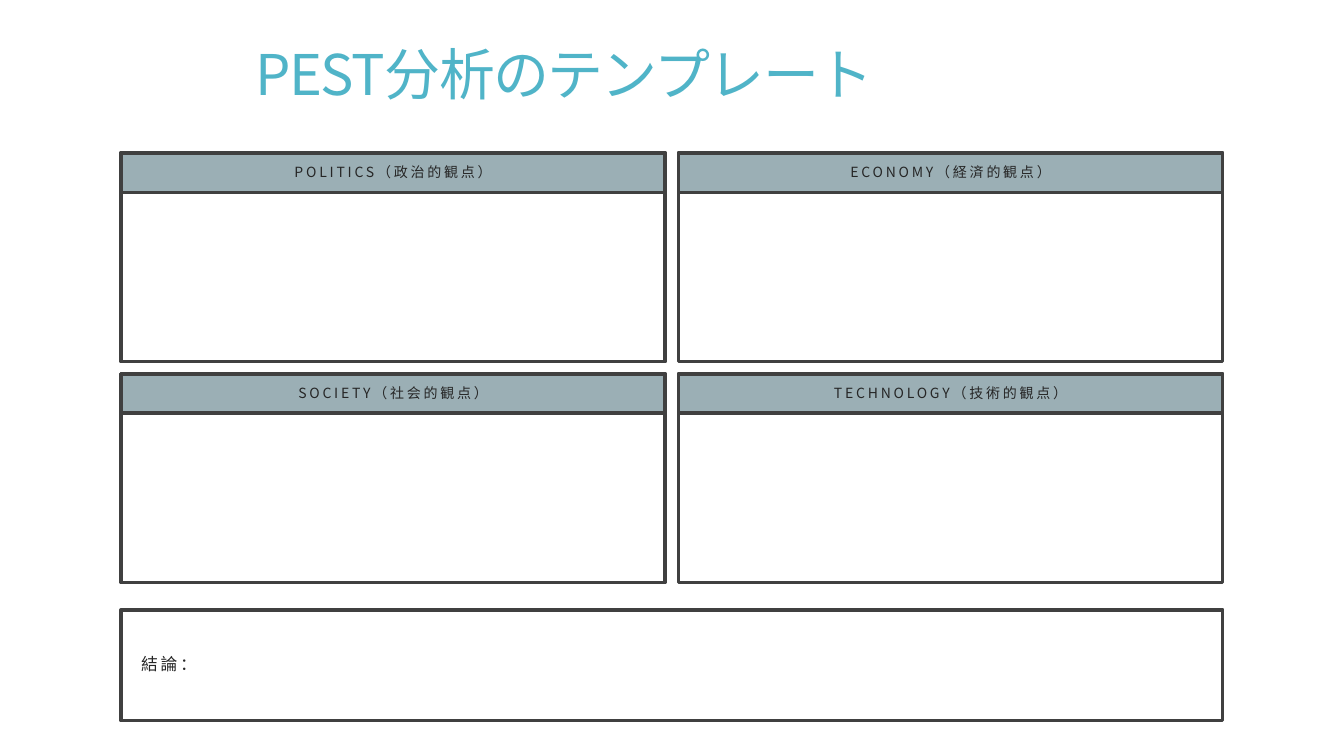
from dataclasses import dataclass

from lxml import etree
from pptx import Presentation
from pptx.dml.color import RGBColor
from pptx.enum.shapes import MSO_SHAPE
from pptx.enum.text import MSO_ANCHOR, PP_ALIGN
from pptx.oxml.ns import qn
from pptx.shapes.autoshape import Shape
from pptx.slide import Slide
from pptx.util import Pt

RECTANGLE = MSO_SHAPE.RECTANGLE
MIDDLE = MSO_ANCHOR.MIDDLE
LEFT, CENTER = PP_ALIGN.LEFT, PP_ALIGN.CENTER

FONT = "Noto Sans CJK JP"
COLORS = {
    "title": "50B4C8",
    "text": "262626",
    "border": "404040",
    "header": "9BAFB5",
    "panel": "FFFFFF",
}

GRID_LEFT, GRID_TOP = 86.4, 109.4
PANEL_WIDTH, PANEL_HEIGHT = 388.8, 149
COLUMN_STEP, ROW_STEP = 398.2, 157.7
HEADER_HEIGHT = 28.1
TEXT_INSET = 14.4


@dataclass(frozen=True)
class Box:
    left: float
    top: float
    width: float
    height: float


@dataclass(frozen=True)
class Perspective:
    heading: str
    column: int
    row: int

    def box(self, height: float) -> Box:
        return Box(
            GRID_LEFT + self.column * COLUMN_STEP,
            GRID_TOP + self.row * ROW_STEP,
            PANEL_WIDTH,
            height,
        )


@dataclass(frozen=True)
class TextStyle:
    size: float
    color: str
    tracking: float
    line_spacing: float
    align: PP_ALIGN = LEFT


TITLE_STYLE = TextStyle(40, "title", -1.2, 0.85)
HEADER_STYLE = TextStyle(10, "text", 2, 0.9, CENTER)
CONCLUSION_STYLE = TextStyle(12, "text", 2, 0.9)

PERSPECTIVES = [
    Perspective("POLITICS（政治的観点）", 0, 0),
    Perspective("ECONOMY（経済的観点）", 1, 0),
    Perspective("SOCIETY（社会的観点）", 0, 1),
    Perspective("TECHNOLOGY（技術的観点）", 1, 1),
]
TITLE_BOX = Box(175.7, 33.1, 608.4, 46.1)
CONCLUSION_BOX = Box(GRID_LEFT, 435.6, COLUMN_STEP + PANEL_WIDTH, 79.2)


def rgb(name: str) -> RGBColor:
    return RGBColor.from_string(COLORS[name])


def bounds(box: Box) -> tuple[Pt, Pt, Pt, Pt]:
    return Pt(box.left), Pt(box.top), Pt(box.width), Pt(box.height)


def write(holder: Shape, text: str, style: TextStyle) -> None:
    frame = holder.text_frame
    frame.word_wrap = True
    frame.vertical_anchor = MIDDLE
    paragraph = frame.paragraphs[0]
    paragraph.text = text
    paragraph.alignment = style.align
    paragraph.line_spacing = style.line_spacing
    font = paragraph.font
    font.name = FONT
    font.size = Pt(style.size)
    font.color.rgb = rgb(style.color)
    properties = paragraph._p.pPr.find(qn("a:defRPr"))
    properties.set("spc", str(round(style.tracking * 100)))
    east_asian = etree.Element(qn("a:ea"), typeface=FONT)
    properties.find(qn("a:latin")).addnext(east_asian)


def add_panel(slide: Slide, box: Box, fill: str) -> Shape:
    panel = slide.shapes.add_shape(RECTANGLE, *bounds(box))
    panel.shadow.inherit = False
    panel.fill.solid()
    panel.fill.fore_color.rgb = rgb(fill)
    panel.line.color.rgb = rgb("border")
    panel.line.width = Pt(2.5)
    return panel


def add_text_panel(slide: Slide, box: Box, fill: str, text: str, style: TextStyle) -> None:
    panel = add_panel(slide, box, fill)
    frame = panel.text_frame
    frame.margin_left = frame.margin_right = Pt(TEXT_INSET)
    frame.margin_top = frame.margin_bottom = Pt(TEXT_INSET)
    write(panel, text, style)


def main() -> None:
    presentation = Presentation()
    presentation.slide_width, presentation.slide_height = Pt(960), Pt(540)
    slide = presentation.slides.add_slide(presentation.slide_layouts[6])

    title = slide.shapes.add_textbox(*bounds(TITLE_BOX))
    write(title, "PEST分析のテンプレート", TITLE_STYLE)

    for perspective in PERSPECTIVES:
        add_panel(slide, perspective.box(PANEL_HEIGHT), "panel")
    add_text_panel(slide, CONCLUSION_BOX, "panel", "結論：", CONCLUSION_STYLE)
    for perspective in PERSPECTIVES:
        add_text_panel(
            slide, perspective.box(HEADER_HEIGHT), "header", perspective.heading, HEADER_STYLE
        )

    presentation.save("out.pptx")


if __name__ == "__main__":
    main()
